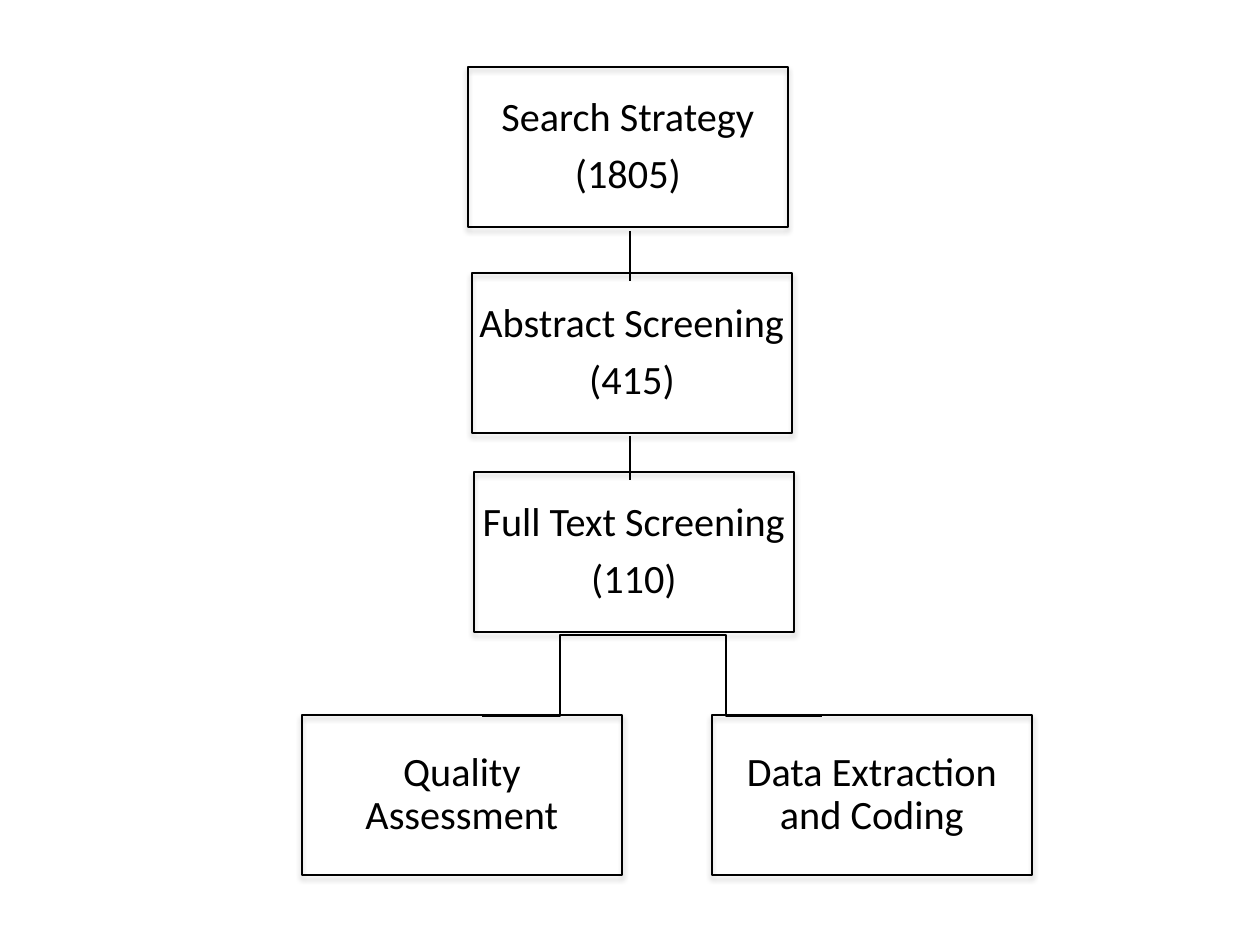
from dataclasses import dataclass

from lxml import etree
from pptx import Presentation
from pptx import util as u
from pptx.dml.color import RGBColor
from pptx.enum import shapes, text
from pptx.oxml import ns

EMU_PER_PX = 914400 / 126


def px(n):
    return u.Emu(round(n * EMU_PER_PX))


@dataclass(frozen=True)
class Theme:
    ink: RGBColor = RGBColor(0, 0, 0)
    font: str = "Calibri"
    size: u.Length = u.Pt(23)
    line: u.Length = u.Pt(0.75)
    para_gap: u.Length = u.Pt(8)
    shadow_blur: u.Length = u.Pt(3.1)
    shadow_drop: u.Length = u.Pt(1.8)
    shadow_alpha: int = 35


def assign(obj, values):
    for name, value in values.items():
        setattr(obj, name, value)


class FlowChart:
    BOX_W, BOX_H, INSET = 320, 160, 2

    def __init__(self, slide, theme):
        self.s, self.theme = slide, theme

    def outline(self, sp):
        sp.line.color.rgb = self.theme.ink
        sp.line.width = self.theme.line

    def shadow(self, sp):
        t = self.theme
        sp.shadow.inherit = False
        effects = sp._element.spPr.find(ns.qn("a:effectLst"))
        outer = etree.SubElement(effects, ns.qn("a:outerShdw"), {
            "blurRad": str(t.shadow_blur), "dist": str(t.shadow_drop),
            "dir": str(90 * 60000), "rotWithShape": "0"})
        clr = etree.SubElement(outer, ns.qn("a:srgbClr"), val=str(t.ink))
        etree.SubElement(clr, ns.qn("a:alpha"), val=str(t.shadow_alpha * 1000))

    def box(self, left, top, lines):
        area = [px(n) for n in (left, top, self.BOX_W, self.BOX_H)]
        self.frame(area)
        self.label(area, lines)

    def frame(self, area):
        sp = self.s.shapes.add_shape(shapes.MSO_SHAPE.RECTANGLE, *area)
        sp.fill.background()
        self.outline(sp)
        self.shadow(sp)

    def label(self, area, lines):
        t = self.theme
        tf = self.s.shapes.add_textbox(*area).text_frame
        assign(tf, {"word_wrap": True, "vertical_anchor": text.MSO_ANCHOR.MIDDLE})
        assign(tf, {f"margin_{side}": px(self.INSET)
                    for side in ("left", "top", "right", "bottom")})
        for i, line in enumerate(lines):
            p = tf.add_paragraph() if i else tf.paragraphs[0]
            assign(p, {"alignment": text.PP_ALIGN.CENTER, "line_spacing": 0.9,
                       "space_after": t.para_gap})
            r = p.add_run()
            r.text = line
            assign(r.font, {"name": t.font, "size": t.size})
            r.font.color.rgb = t.ink

    def connector(self, kind, start, end):
        sp = self.s.shapes.add_connector(kind, *map(px, start + end))
        self.outline(sp)
        etree.SubElement(sp._element.spPr, ns.qn("a:effectLst"))


def main():
    prs = Presentation()
    prs.slide_width, prs.slide_height = u.Inches(10), u.Inches(7.5)
    chart = FlowChart(prs.slides.add_slide(prs.slide_layouts[6]), Theme())

    # Screening stages, then the two final steps
    for left, top, lines in (
        (468, 67, ("Search Strategy", "(1805)")),
        (472, 273, ("Abstract Screening", "(415)")),
        (474, 472, ("Full Text Screening", "(110)")),
        (302, 715, ("Quality Assessment",)),
        (712, 715, ("Data Extraction and Coding",)),
    ):
        chart.box(left, top, lines)

    # Links between stages
    for top, bottom in ((231, 281), (436, 480)):
        chart.connector(shapes.MSO_CONNECTOR.STRAIGHT, (630, top), (630, bottom))

    # Branches to the final steps
    for start_x, end_x in ((638, 482), (630, 822)):
        chart.connector(shapes.MSO_CONNECTOR.ELBOW, (start_x, 635), (end_x, 716))

    prs.save("out.pptx")


if __name__ == "__main__":
    main()
